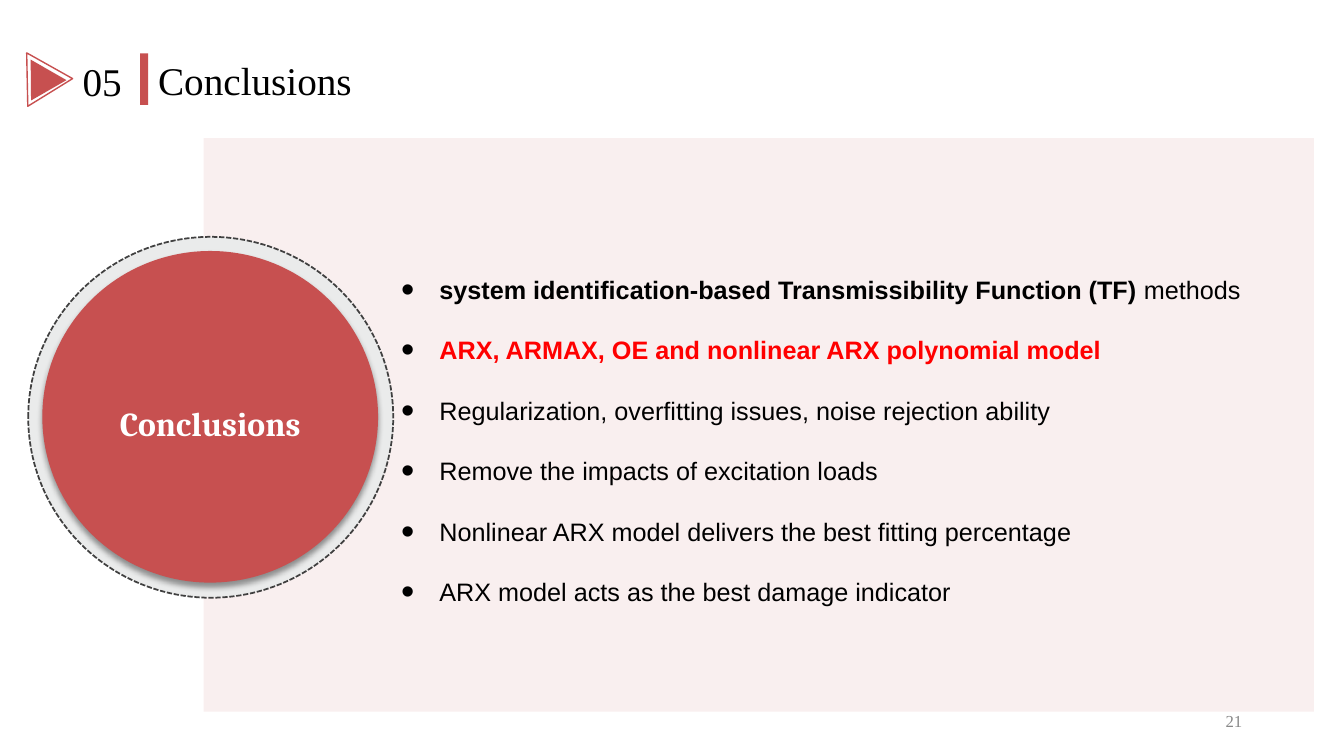
from lxml.etree import SubElement
from pptx import Presentation
from pptx.dml.color import RGBColor
from pptx.enum.dml import MSO_LINE_DASH_STYLE as Dash
from pptx.enum.shapes import MSO_SHAPE as Shape
from pptx.enum.text import MSO_ANCHOR as Anchor, PP_ALIGN as Align
from pptx.oxml.ns import qn
from pptx.util import Inches, Pt

RED = RGBColor(0xC7, 0x50, 0x50)
BRIGHT_RED = RGBColor(0xFF, 0x00, 0x00)
PALE_GREY = RGBColor(0xEA, 0xEB, 0xEB)
DARK_GREY = RGBColor(0x40, 0x40, 0x40)
PAGE_GREY = RGBColor(0x88, 0x88, 0x88)
BLACK = RGBColor(0, 0, 0)
WHITE = RGBColor(0xFF, 0xFF, 0xFF)
SERIF = "Times New Roman"

deck = Presentation()
deck.slide_width, deck.slide_height = Inches(13.33), Inches(7.5)
slide = deck.slides.add_slide(deck.slide_layouts[6])


def add_figure(kind, box, fill=None, line=None, width=1):
    figure = slide.shapes.add_shape(kind, *map(Inches, box))
    figure.shadow.inherit = False
    if fill is None:
        figure.fill.background()
    else:
        figure.fill.solid()
        figure.fill.fore_color.rgb = fill
    if line is None:
        figure.line.fill.background()
    else:
        figure.line.color.rgb = line
        figure.line.width = Pt(width)
    return figure


def style(font, name, size, color, bold=False):
    font.name, font.size, font.bold = name, Pt(size), bold
    font.color.rgb = color


# Pale panel behind the points
panel = add_figure(Shape.ROUNDED_RECTANGLE, (2.02, 1.37, 11.01, 5.69), RED)
panel.adjustments[0] = 0
panel_color = panel.fill._xPr.find(qn("a:solidFill"))[0]
SubElement(panel_color, qn("a:alpha"), val="9000")

# Heading: bar, number, title, arrow of two triangles
add_figure(Shape.RECTANGLE, (1.39, 0.53, 0.08, 0.51), RED)

labels = [
    ("05", (0.72, 0.52, 0.75, 0.57), 28, BLACK, Align.LEFT, Anchor.TOP),
    ("Conclusions", (1.47, 0.51, 5.62, 0.57), 28, BLACK, Align.LEFT, Anchor.TOP),
    ("21", (9.42, 6.95, 3, 0.4), 12, PAGE_GREY, Align.RIGHT, Anchor.MIDDLE),
]
for text, box, size, color, align, anchor in labels:
    frame = slide.shapes.add_textbox(*map(Inches, box)).text_frame
    frame.word_wrap = True
    frame.vertical_anchor = anchor
    frame.text = text
    frame.paragraphs[0].alignment = align
    style(frame.paragraphs[0].runs[0].font, SERIF, size, color)

arrow_outline = add_figure(Shape.ISOSCELES_TRIANGLE, (0.23, 0.56, 0.53, 0.45), line=RED)
arrow_outline.rotation = 88.8
arrow_core = add_figure(Shape.ISOSCELES_TRIANGLE, (0.19, 0.67, 0.41, 0.35), RED)
arrow_core.rotation = 209.8

# Round badge with a dashed ring and a soft shadow
ring = add_figure(Shape.OVAL, (0.28, 2.35, 3.62, 3.58), PALE_GREY, DARK_GREY, 1.25)
ring.line.dash_style = Dash.SQUARE_DOT
# SQUARE_DOT is sysDot in the file; the ring uses short dashes
ring.line._ln.find(qn("a:prstDash")).set("val", "sysDash")

badge = add_figure(Shape.OVAL, (0.42, 2.49, 3.33, 3.29), RED)
effects = badge._element.spPr.find(qn("a:effectLst"))
shadow = SubElement(effects, qn("a:outerShdw"), blurRad=str(Pt(4)), dist=str(Pt(3)),
                    dir=str(90 * 60000), algn="t", rotWithShape="0")
shadow_color = SubElement(shadow, qn("a:srgbClr"), val=str(BLACK))
SubElement(shadow_color, qn("a:alpha"), val="40000")
badge.text_frame.vertical_anchor = Anchor.MIDDLE
badge.text_frame.text = "Conclusions"
caption = badge.text_frame.paragraphs[0]
caption.alignment = Align.CENTER
caption.line_spacing = 1.3
style(caption.runs[0].font, "Cambria", 24, WHITE, True)

# Bulleted points, each a list of (text, colour, bold) runs
points = [
    [("system identification-based Transmissibility Function (TF) ", BLACK, True),
     ("methods", BLACK, False)],
    [("ARX, ARMAX, OE and nonlinear ARX polynomial model", BRIGHT_RED, True)],
    [("Regularization, overfitting issues, noise rejection ability", BLACK, False)],
    [("Remove the impacts of excitation loads", BLACK, False)],
    [("Nonlinear ARX model delivers the best fitting percentage", BLACK, False)],
    [("ARX model acts as the best damage indicator", BLACK, False)],
]
frame = slide.shapes.add_textbox(*map(Inches, (3.88, 2.4, 9.02, 3.64))).text_frame
frame.word_wrap = True
frame.vertical_anchor = Anchor.MIDDLE
for index, pieces in enumerate(points):
    point = frame.add_paragraph() if index else frame.paragraphs[0]
    point.alignment = Align.JUSTIFY
    point.line_spacing = 2.0
    props = point._p.get_or_add_pPr()
    props.set("marL", str(Inches(0.38)))
    props.set("indent", str(-Inches(0.38)))
    bullet_color = SubElement(props, qn("a:buClr"))
    SubElement(bullet_color, qn("a:srgbClr"), val=str(BLACK))
    SubElement(props, qn("a:buSzPct"), val="150000")
    SubElement(props, qn("a:buFont"), typeface="Arial")
    SubElement(props, qn("a:buChar"), char="•")
    for text, color, bold in pieces:
        run = point.add_run()
        run.text = text
        style(run.font, "Arial", 18, color, bold)

deck.save("out.pptx")
